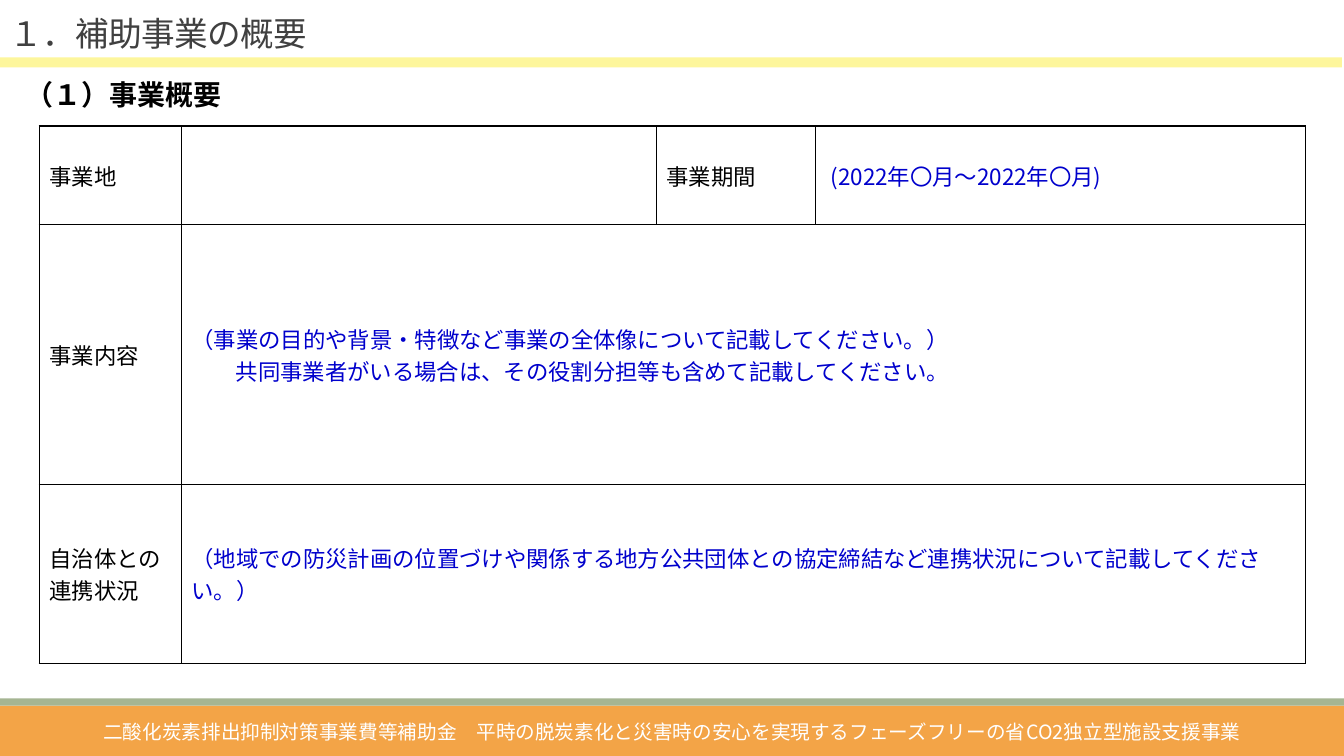
from pptx import Presentation
from pptx.dml.color import RGBColor
from pptx.enum.shapes import MSO_SHAPE
from pptx.enum.text import MSO_ANCHOR, PP_ALIGN
from pptx.oxml.ns import qn
from pptx.util import Inches, Pt
from lxml.etree import SubElement

FONT = "Noto Sans CJK JP"
COLORS = {"orange": "F3A447", "green": "A5B592", "yellow": "FDF69C",
          "grey": "404040", "black": "000000", "white": "FFFFFF",
          "blue": "0000CC"}
BARS = [("orange", 0, 7, 13.33, 0.5),
        ("green", 0, 6.93, 13.33, 0.07),
        ("yellow", 0, 0.57, 13.31, 0.1)]
TITLE = "１．補助事業の概要"
HEAD = "（１）事業概要"
FOOT = "二酸化炭素排出抑制対策事業費等補助金　平時の脱炭素化と災害時の安心を実現するフェーズフリーの省CO2独立型施設支援事業"
COLS = [1.41, 4.71, 1.58, 4.86]
ROWS = [0.98, 2.58, 1.77]
CELLS = [
    ["事業地", "", "事業期間", " (2022年〇月～2022年〇月)"],
    ["事業内容", "（事業の目的や背景・特徴など事業の全体像について記載してください。）\n"
     "共同事業者がいる場合は、その役割分担等も含めて記載してください。"],
    ["自治体との連携状況",
     "（地域での防災計画の位置づけや関係する地方公共団体との協定締結など連携状況について記載してください。）"],
]
INDENT = 0.44


def rgb(name):
    """Return the named colour."""
    return RGBColor.from_string(COLORS[name])


def style(frame, size, color, bold=False):
    """Format every run in a text frame."""
    for para in frame.paragraphs:
        for run in para.runs:
            font = run.font
            font.size, font.bold, font.name = Pt(size), bold, FONT
            font.color.rgb = rgb(color)
            SubElement(font._element, qn("a:ea")).set("typeface", FONT)


def add_bar(slide, color, *box):
    """Add a plain coloured band."""
    bar = slide.shapes.add_shape(MSO_SHAPE.RECTANGLE, *map(Inches, box))
    bar.shadow.inherit = False
    bar.fill.solid()
    bar.fill.fore_color.rgb = rgb(color)
    bar.line.fill.background()


def add_text(slide, text, box, size, color, bold=False):
    """Add a text box and return its frame."""
    frame = slide.shapes.add_textbox(*map(Inches, box)).text_frame
    frame.word_wrap = True
    frame.text = text
    style(frame, size, color, bold)
    return frame


def add_edges(cell):
    """Draw thin black borders around a cell."""
    props = cell._tc.get_or_add_tcPr()
    for spot, side in enumerate(("lnL", "lnR", "lnT", "lnB")):
        line = SubElement(props, qn(f"a:{side}"), w=str(Pt(1)))
        fill = SubElement(line, qn("a:solidFill"))
        SubElement(fill, qn("a:srgbClr"), val=COLORS["black"])
        props.insert(spot, line)


def add_grid(slide):
    """Add the project overview table."""
    box = map(Inches, (0.39, 1.25, sum(COLS), sum(ROWS)))
    table = slide.shapes.add_table(len(ROWS), len(COLS), *box).table
    table.first_row = table.horz_banding = False
    for col, width in zip(table.columns, COLS):
        col.width = Inches(width)
    for row, height in zip(table.rows, ROWS):
        row.height = Inches(height)
    for cell in table.iter_cells():
        cell.fill.background()
        cell.vertical_anchor = MSO_ANCHOR.MIDDLE
        add_edges(cell)
    for r, texts in enumerate(CELLS):
        if len(texts) == 2:
            table.cell(r, 1).merge(table.cell(r, len(COLS) - 1))
        for c, text in enumerate(texts):
            frame = table.cell(r, c).text_frame
            frame.text = text
            style(frame, 16, "blue" if c % 2 else "black")
            for para in frame.paragraphs[1:]:
                props = para._p.get_or_add_pPr()
                props.set("marL", str(Inches(INDENT)))
                props.set("indent", "0")


def main():
    """Build and save the slide."""
    deck = Presentation()
    deck.slide_width, deck.slide_height = Inches(13.33), Inches(7.5)
    slide = deck.slides.add_slide(deck.slide_layouts[6])
    for bar in BARS:
        add_bar(slide, *bar)
    title = add_text(slide, TITLE, (0, 0.03, 3.44, 0.55), 24, "grey")
    title.vertical_anchor = MSO_ANCHOR.BOTTOM
    para = title.paragraphs[0]
    para.line_spacing = 0.85
    para.runs[0].font._element.set("spc", "-50")
    add_text(slide, HEAD, (0.15, 0.72, 5.4, 0.44), 20, "black", True)
    foot = add_text(slide, FOOT, (0.21, 7.09, 12.91, 0.37), 14, "white")
    foot.paragraphs[0].alignment = PP_ALIGN.CENTER
    add_grid(slide)
    deck.save("out.pptx")


if __name__ == "__main__":
    main()
